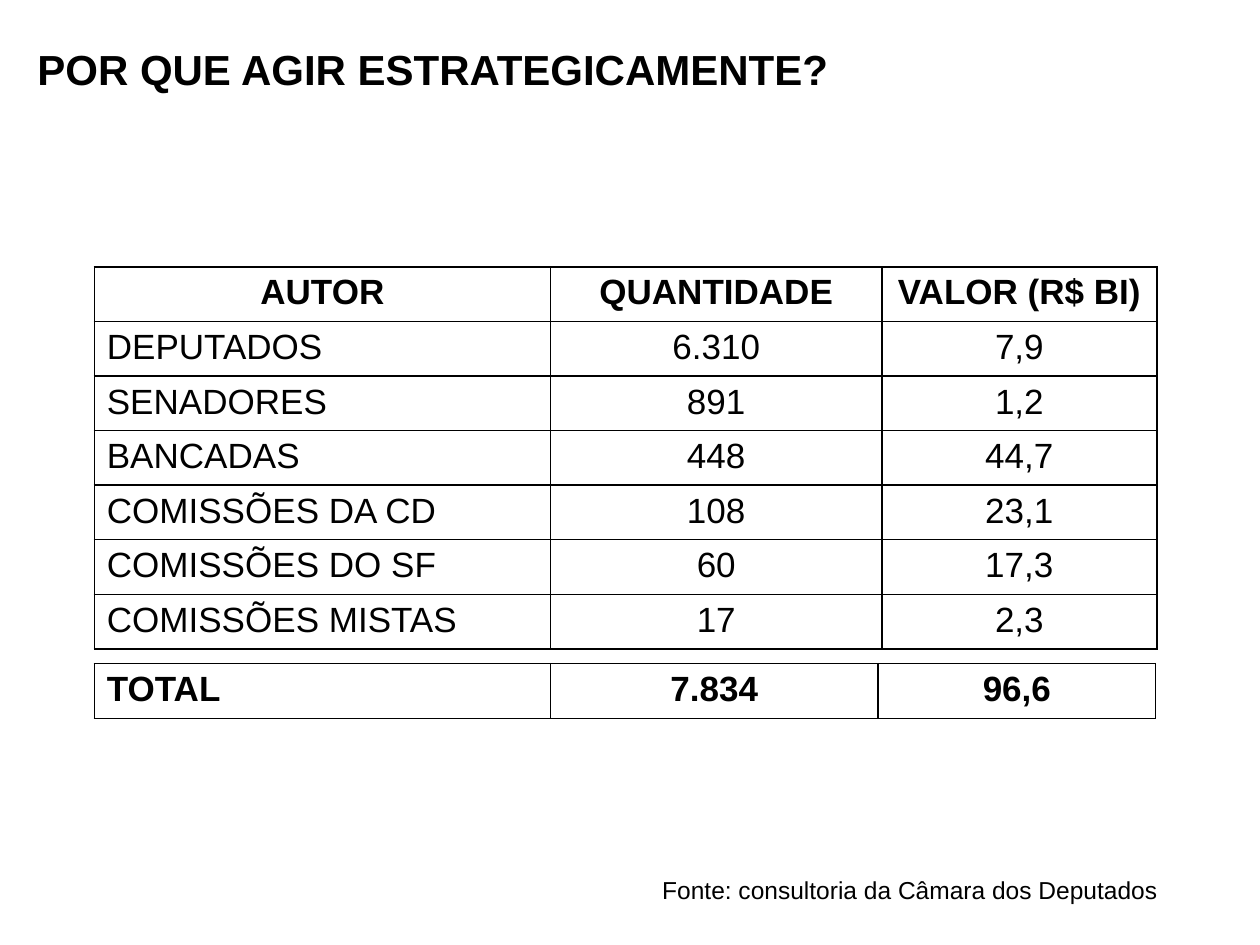
"""Build the slide on amendments by author, with two bordered tables."""
from lxml import etree
from pptx import Presentation
from pptx.dml.color import RGBColor
from pptx.enum.text import MSO_ANCHOR, MSO_AUTO_SIZE, PP_ALIGN
from pptx.oxml.ns import qn
from pptx.util import Cm, Pt

LEFT, CENTER = PP_ALIGN.LEFT, PP_ALIGN.CENTER
TOP, NO_FIT = MSO_ANCHOR.TOP, MSO_AUTO_SIZE.NONE

TITLE = "POR QUE AGIR ESTRATEGICAMENTE?"
SOURCE = "Fonte: consultoria da Câmara dos Deputados"
AUTHORS = [
    ("AUTOR", "QUANTIDADE", "VALOR (R$ BI)"),
    ("DEPUTADOS", "6.310", "7,9"),
    ("SENADORES", "891", "1,2"),
    ("BANCADAS", "448", "44,7"),
    ("COMISSÕES DA CD", "108", "23,1"),
    ("COMISSÕES DO SF", "60", "17,3"),
    ("COMISSÕES MISTAS", "17", "2,3"),
]
TOTAL = [("TOTAL", "7.834", "96,6")]

THEME = {
    "font": "Arial", "ink": "000000", "paper": "FFFFFF",
    "title": 24, "table": 20, "source": 14, "border": 1,
}
TABLE_LEFT, ROW_HEIGHT = 1.9, 1.1


def format_paragraph(paragraph, size, bold=False, align=LEFT):
    paragraph.alignment = align
    values = {"name": THEME["font"], "size": Pt(size), "bold": bold}
    for attribute, value in values.items():
        setattr(paragraph.font, attribute, value)
    paragraph.font.color.rgb = RGBColor.from_string(THEME["ink"])


def fill_text(holder, text, size, bold=False):
    frame = holder.text_frame
    values = {"text": text, "word_wrap": True, "auto_size": NO_FIT, "vertical_anchor": TOP}
    for attribute, value in values.items():
        setattr(frame, attribute, value)
    format_paragraph(frame.paragraphs[0], size, bold)


def add_borders(cell):
    properties = cell._tc.get_or_add_tcPr()
    for position, side in enumerate(("lnL", "lnR", "lnT", "lnB")):
        border = etree.Element(qn(f"a:{side}"), w=str(Pt(THEME["border"])))
        fill = etree.SubElement(border, qn("a:solidFill"))
        etree.SubElement(fill, qn("a:srgbClr"), val=THEME["ink"])
        properties.insert(position, border)


def add_grid(slide, rows, top, widths, bold_row):
    grid = slide.shapes.add_table(
        len(rows), len(widths), Cm(TABLE_LEFT), Cm(top),
        Cm(sum(widths)), Cm(ROW_HEIGHT * len(rows)),
    ).table
    grid.first_row = grid.horz_banding = False
    for column, width in zip(grid.columns, widths):
        column.width = Cm(width)
    for row_index, row in enumerate(rows):
        grid.rows[row_index].height = Cm(ROW_HEIGHT)
        for column_index, text in enumerate(row):
            cell = grid.cell(row_index, column_index)
            cell.text = text
            cell.fill.background()
            is_heading = rows is AUTHORS and row_index == 0
            align = CENTER if column_index or is_heading else LEFT
            format_paragraph(
                cell.text_frame.paragraphs[0], THEME["table"], row_index == bold_row, align
            )
            add_borders(cell)


def main():
    deck = Presentation()
    deck.slide_width, deck.slide_height = Cm(25.4), Cm(19.05)
    slide = deck.slides.add_slide(deck.slide_layouts[5])
    slide.background.fill.solid()
    slide.background.fill.fore_color.rgb = RGBColor.from_string(THEME["paper"])

    title = slide.shapes.title
    place = {"left": 0.5, "top": 0.75, "width": 19, "height": 1.28}
    for attribute, value in place.items():
        setattr(title, attribute, Cm(value))
    fill_text(title, TITLE, THEME["title"], bold=True)

    add_grid(slide, AUTHORS, 5.38, (9.2, 6.68, 5.54), bold_row=0)
    add_grid(slide, TOTAL, 13.38, (9.2, 6.6, 5.6), bold_row=0)

    source = slide.shapes.add_textbox(Cm(13.1), Cm(17.52), Cm(11), Cm(0.86))
    fill_text(source, SOURCE, THEME["source"])
    deck.save("out.pptx")


if __name__ == "__main__":
    main()
